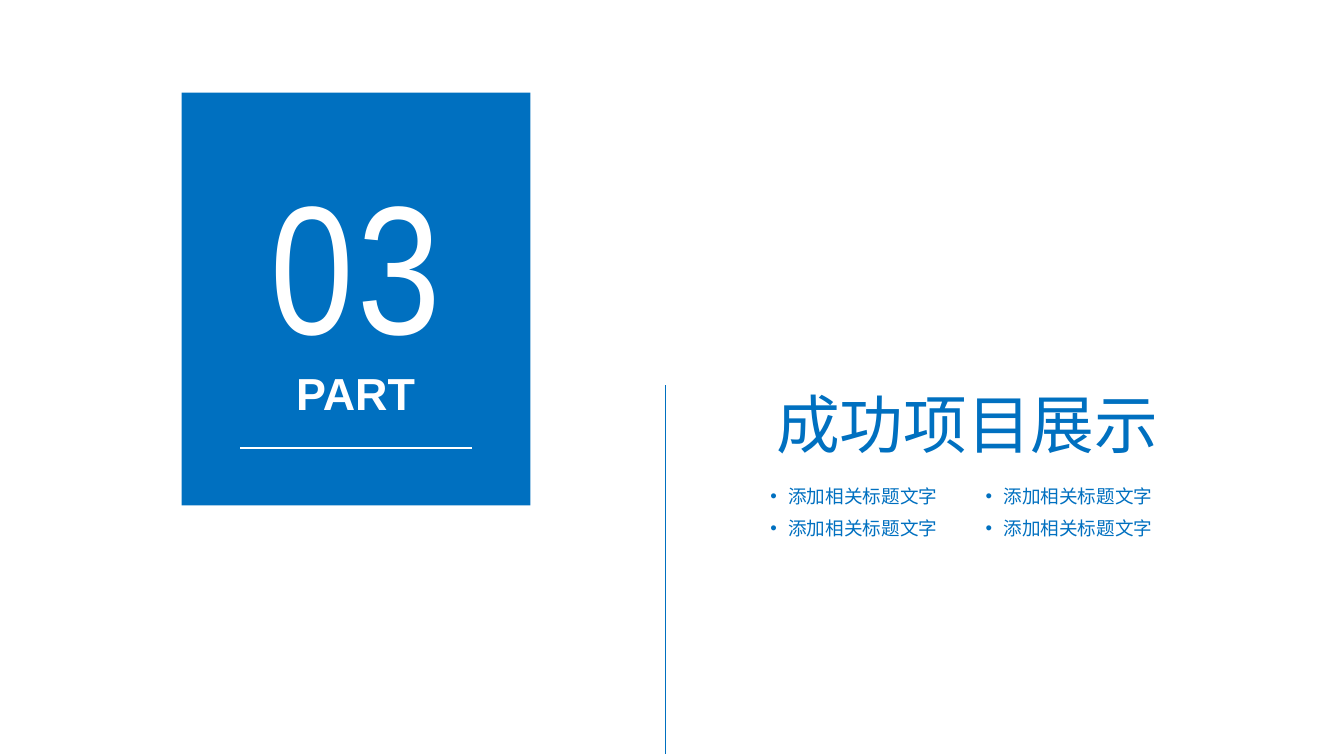
from dataclasses import dataclass

from pptx import Presentation
from pptx.dml.color import RGBColor
from pptx.enum.shapes import MSO_CONNECTOR, MSO_SHAPE
from pptx.enum.text import PP_ALIGN
from pptx.oxml.ns import qn
from pptx.util import Pt


@dataclass(frozen=True)
class Theme:
    blue: RGBColor = RGBColor(0x00, 0x70, 0xC0)
    white: RGBColor = RGBColor(0xFF, 0xFF, 0xFF)
    font: str = "Arial"
    narrow: str = "Arial Narrow"
    digit: float = 137.9
    label: float = 33.8
    title: float = 48
    item: float = 14


THEME = Theme()


def add_line(slide, start, end, color, width):
    line = slide.shapes.add_connector(
        MSO_CONNECTOR.STRAIGHT, *map(Pt, start + end))
    line.line.color.rgb = color
    line.line.width = Pt(width)
    props = line.element.spPr
    props.append(props.makeelement(qn("a:effectLst"), {}))


def add_text(slide, box, text, size, color, font=THEME.font, bold=False,
             align=PP_ALIGN.LEFT, top=0, track=0, bullet=False):
    frame = slide.shapes.add_textbox(*map(Pt, box)).text_frame
    frame.word_wrap = True
    frame.margin_left = frame.margin_right = frame.margin_bottom = 0
    frame.margin_top = Pt(top)
    para = frame.paragraphs[0]
    para.alignment = align
    if bullet:
        props = para._p.get_or_add_pPr()
        props.set("marL", str(Pt(13.5)))
        props.set("indent", str(-Pt(13.5)))
        for tag, name, value in (("a:buFont", "typeface", THEME.font),
                                 ("a:buChar", "char", "•")):
            props.append(props.makeelement(qn(tag), {name: value}))
    run = para.add_run()
    run.text = text
    run.font.size = Pt(size)
    run.font.name = font
    run.font.bold = bold
    run.font.color.rgb = color
    if track:
        run._r.get_or_add_rPr().set("spc", str(track * 100))


def add_badge(slide, left, top, width, height):
    # Blue panel
    panel = slide.shapes.add_shape(
        MSO_SHAPE.RECTANGLE, *map(Pt, (left, top, width, height)))
    panel.shadow.inherit = False
    panel.fill.solid()
    panel.fill.fore_color.rgb = THEME.blue
    panel.line.fill.background()

    # Number, label and rule
    add_text(slide, (left + 31.7, top + 32.4, 198.7, 174.2), "03",
             THEME.digit, THEME.white, THEME.narrow,
             align=PP_ALIGN.CENTER, top=11.6, track=3)
    add_text(slide, (left + 34.6, top + 205.9, 193, 41), "PART",
             THEME.label, THEME.white, bold=True, align=PP_ALIGN.CENTER)
    rule = top + 267.8
    add_line(slide, (left + 44, rule), (left + 218.9, rule), THEME.white, 1.5)


def add_topic(slide, left, top, width, height):
    # Divider and title
    add_line(slide, (left, top), (left, top + height), THEME.blue, 0.5)
    add_text(slide, (left + 83.5, top, width - 83.5, 58.3), "成功项目展示",
             THEME.title, THEME.blue)

    # Two by two bullets
    for row in range(2):
        for col in range(2):
            box = (left + 79.2 + col * 162, top + 74.9 + row * 24.5, 144.7, 17.3)
            add_text(slide, box, "添加相关标题文字", THEME.item,
                     THEME.blue, bullet=True)


def main():
    deck = Presentation()
    deck.slide_width, deck.slide_height = Pt(1012.3), Pt(569.5)
    slide = deck.slides.add_slide(deck.slide_layouts[6])
    add_badge(slide, 136.8, 69.8, 262.8, 311)
    add_topic(slide, 501.1, 290.2, 423.4, 277.9)
    deck.save("out.pptx")


if __name__ == "__main__":
    main()
